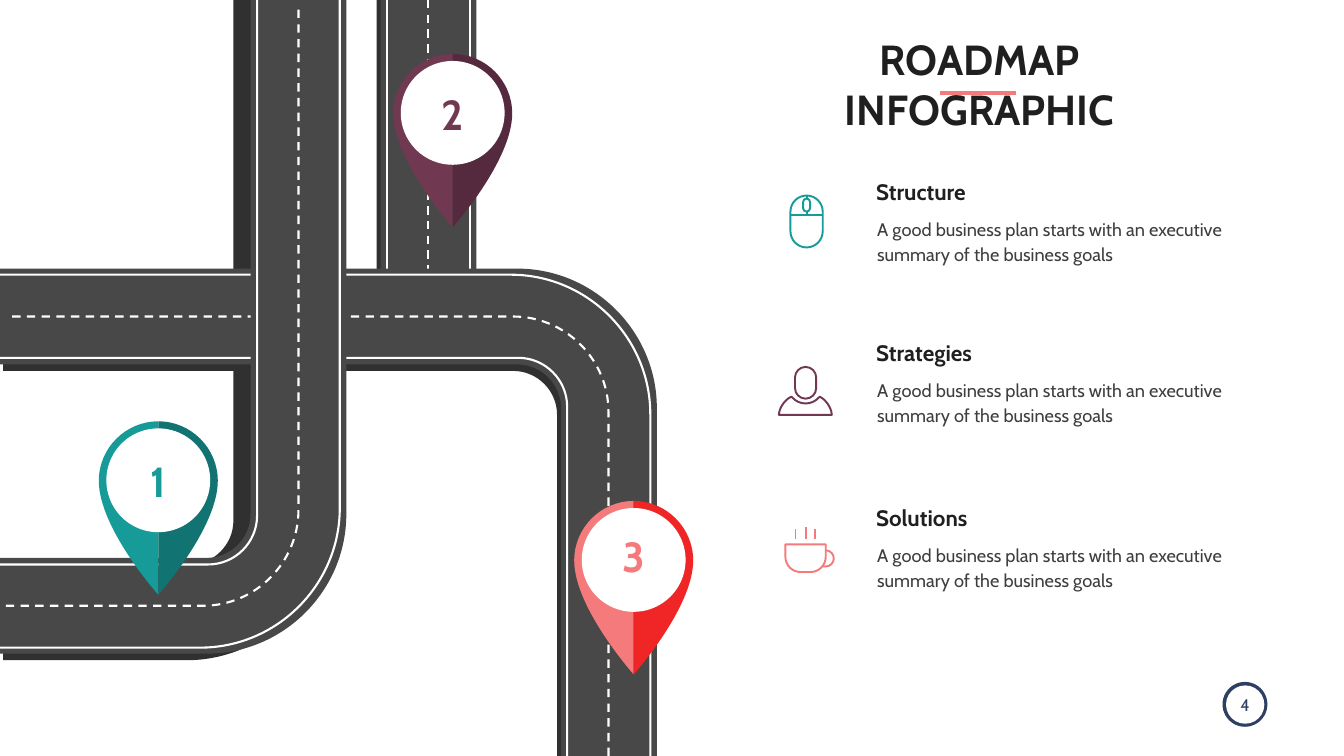
from dataclasses import dataclass
from math import dist
from typing import Any, Optional

from lxml.etree import SubElement
from pptx import Presentation
from pptx.dml.color import RGBColor
from pptx.enum.dml import MSO_LINE
from pptx.enum.shapes import MSO_CONNECTOR, MSO_SHAPE
from pptx.enum.text import MSO_ANCHOR, MSO_AUTO_SIZE, PP_ALIGN
from pptx.oxml.ns import qn
from pptx.util import Emu, Pt

PX = 9144
FONT = "Cabin"
ARC = 0.55
ASPHALT, SHADE, WHITE, INK = "484848", "303030", "FFFFFF", "1F1F1F"
TEAL, PLUM, CORAL, NAVY = "179B98", "713852", "F57A7B", "2D3F63"
BLURB = "A good business plan starts with an executive summary of the business goals"


@dataclass
class Contour:
    points: list
    closed: bool = False


@dataclass
class Road:
    body: list
    lane: list
    edges: list


@dataclass
class Pin:
    label: str
    cx: int
    top: int
    label_top: int
    color: str
    dark: str


@dataclass
class Topic:
    heading: str
    top: int
    color: str
    icon: list


def px(n: float) -> Emu:
    return Emu(round(n * PX))


def rgb(color: str) -> RGBColor:
    return RGBColor.from_string(color)


def vertices(c: Contour) -> list:
    found = []
    for i, pt in enumerate(c.points):
        if len(pt) == 2:
            found.append((*pt, False))
        elif len(pt) == 6:
            found += [(*pt[k:k + 2], True) for k in (0, 2, 4)]
        else:
            x, y, radius = pt
            arms = []
            for nx, ny, *_ in (c.points[i - 1], c.points[(i + 1) % len(c.points)]):
                k = radius / dist((x, y), (nx, ny))
                arms.append(((nx - x) * k, (ny - y) * k))
            (ux, uy), (vx, vy) = arms
            k = 1 - ARC
            found += [(x + ux, y + uy, False), (x + ux * k, y + uy * k, True),
                      (x + vx * k, y + vy * k, True), (x + vx, y + vy, True)]
    return found


def paint(sp: Any, fill: Optional[str] = None, line: Optional[str] = None,
          width: float = 3, dash: bool = False) -> None:
    sp.shadow.inherit = False
    if fill:
        sp.fill.solid()
        sp.fill.fore_color.rgb = rgb(fill)
    else:
        sp.fill.background()
    if line:
        sp.line.color.rgb = rgb(line)
        sp.line.width = Pt(width)
        if dash:
            sp.line.dash_style = MSO_LINE.DASH
    else:
        sp.line.fill.background()


def add_outline(shapes: Any, contours: list, **style: Any) -> None:
    builder, flags = None, []
    for c in contours:
        found = vertices(c)
        flags += [curved for *_, curved in found]
        (x, y), *rest = [(a * PX, b * PX) for a, b, _ in found]
        if builder is None:
            builder = shapes.build_freeform(x, y)
        else:
            builder.move_to(x, y)
        builder.add_line_segments(rest, close=c.closed)
    sp = builder.convert_to_shape()
    nodes = list(sp._element.iter(qn("a:moveTo"), qn("a:lnTo")))
    curved = [n for n, flag in zip(nodes, flags) if flag]
    for first, *others in zip(curved[::3], curved[1::3], curved[2::3]):
        first.tag = qn("a:cubicBezTo")
        for n in others:
            first.append(n[0])
            n.getparent().remove(n)
    paint(sp, **style)


def add_preset(shapes: Any, kind: Any, x: int, y: int, w: int, h: int, fill: str) -> None:
    paint(shapes.add_shape(kind, px(x), px(y), px(w), px(h)), fill)


def add_line(shapes: Any, x1: int, y1: int, x2: int, y2: int, color: str,
             width: float = 3, dash: bool = False) -> None:
    sp = shapes.add_connector(MSO_CONNECTOR.STRAIGHT, px(x1), px(y1), px(x2), px(y2))
    sp.line.color.rgb = rgb(color)
    sp.line.width = Pt(width)
    if dash:
        sp.line.dash_style = MSO_LINE.DASH
    SubElement(sp._element.spPr, qn("a:effectLst"))


def set_text(sp: Any, text: str, size: int, color: str, bold: bool = False,
             align: Any = PP_ALIGN.LEFT, anchor: Any = MSO_ANCHOR.TOP, wrap: bool = False) -> Any:
    tf = sp.text_frame
    tf.auto_size = MSO_AUTO_SIZE.NONE
    tf.word_wrap = wrap
    tf.vertical_anchor = anchor
    p = tf.paragraphs[0]
    p.text = text
    p.alignment = align
    p.font.name, p.font.size, p.font.bold = FONT, Pt(size), bold
    p.font.color.rgb = rgb(color)
    return tf


def add_text(shapes: Any, x: int, y: int, w: int, h: int, *args: Any, **kw: Any) -> Any:
    return set_text(shapes.add_textbox(px(x), px(y), px(w), px(h)), *args, **kw)


def add_road(shapes: Any, road: Road) -> None:
    add_outline(shapes, [Contour(road.body, True)], fill=ASPHALT)
    add_outline(shapes, [Contour(road.lane)], line=WHITE, dash=True)
    for edge in road.edges:
        add_outline(shapes, [Contour(edge)], line=WHITE)


def add_pin(shapes: Any, pin: Pin) -> None:
    grp = shapes.add_group_shape().shapes
    cx, top, tip = pin.cx, pin.top, pin.top + 344
    for r, color in ((-118, pin.color), (118, pin.dark)):
        half = [(cx, top), (cx + r, top, 118), (cx + r, top + 118),
                (cx + r, top + 212, cx, tip, cx, tip)]
        add_outline(grp, [Contour(half, True)], fill=color)
    add_preset(grp, MSO_SHAPE.OVAL, cx - 103, top + 14, 206, 206, WHITE)
    add_text(grp, cx - 32, pin.label_top, 64, 111, pin.label, 60, pin.color,
             bold=True, align=PP_ALIGN.CENTER)


def add_topic(shapes: Any, topic: Topic) -> None:
    add_text(shapes, 1728, topic.top, 232, 64, topic.heading, 32, INK,
             bold=True, anchor=MSO_ANCHOR.MIDDLE)
    tf = add_text(shapes, 1720, topic.top + 68, 780, 118, BLURB, 26, "3E3E3E", wrap=True)
    tf.margin_left = tf.margin_right = px(20)
    tf.margin_top = tf.margin_bottom = px(10)
    tf.paragraphs[0].line_spacing = Pt(36)
    add_outline(shapes, topic.icon, line=topic.color, width=2.75)


SHADOW = [(463, 0), (654, 0), (654, 546), (747, 546), (747, 0), (937, 0), (937, 546),
          (1295, 546, 277), (1295, 1500), (1105, 1500), (1105, 736, 87), (654, 736),
          (654, 1310, 284), (6, 1310), (6, 1120), (463, 1120, 87), (463, 736),
          (6, 736), (6, 546), (463, 546)]
CROSS_ROAD = Road(
    [(0, 533), (1303, 533, 277), (1303, 1500), (1113, 1500), (1113, 723, 87), (0, 723)],
    [(24, 628), (1207, 628, 189), (1207, 1500)],
    [[(0, 545), (1290, 545, 277), (1290, 1500)], [(0, 710), (1125, 710, 97), (1125, 1500)]])
MAIN_ROAD = Road(
    [(497, 0), (687, 0), (687, 1297, 277), (0, 1297), (0, 1107), (497, 1107, 87)],
    [(592, 19), (592, 1202, 190), (0, 1202)],
    [[(674, 0), (674, 1285, 277), (0, 1285)], [(510, 0), (510, 1120, 97), (0, 1120)]])
MOUSE = [Contour([(1568, 388, 32), (1632, 388, 32), (1632, 491, 32), (1568, 491, 32)], True),
         Contour([(1593, 394, 7), (1607, 394, 7), (1607, 420, 7), (1593, 420, 7)], True),
         Contour([(1568, 426), (1632, 426)]),
         Contour([(1600, 388), (1600, 394)]), Contour([(1600, 420), (1600, 426)])]
PERSON = [Contour([(1577, 728, 21), (1619, 728, 21), (1619, 791, 21), (1577, 791, 21)], True),
          Contour([(1545, 823), (1547, 798, 24), (1570, 787), (1598, 818, 40),
                   (1626, 787), (1648, 798, 24), (1650, 823)], True)]
CUP = [Contour([(1558, 1080), (1638, 1080), (1638, 1135, 30), (1558, 1135, 30)], True),
       Contour([(1638, 1092), (1654, 1092, 16), (1654, 1124, 16), (1633, 1124)])]
CUP += [Contour([(x, y), (x, 1070)]) for x, y in ((1578, 1050), (1598, 1045), (1617, 1050))]
TOPICS = [Topic("Structure", 348, TEAL, MOUSE), Topic("Strategies", 667, PLUM, PERSON),
          Topic("Solutions", 995, CORAL, CUP)]
PINS = [Pin("1", 314, 836, 899, TEAL, "117472"), Pin("2", 898, 107, 170, PLUM, "552A3E"),
        Pin("3", 1257, 994, 1048, CORAL, "EF2526")]


def main() -> None:
    prs = Presentation()
    prs.slide_width, prs.slide_height = px(2666), px(1500)
    s = prs.slides.add_slide(prs.slide_layouts[5])
    shapes = s.shapes
    title = shapes.title
    title.left, title.top, title.width, title.height = px(1475), px(61), px(936), px(111)
    set_text(title, "ROADMAP INFOGRAPHIC", 60, INK, bold=True, align=PP_ALIGN.CENTER, wrap=True)
    add_line(shapes, 1865, 185, 2015, 185, CORAL, 5)
    add_preset(shapes, MSO_SHAPE.OVAL, 2425, 1353, 89, 89, NAVY)
    add_preset(shapes, MSO_SHAPE.OVAL, 2432, 1360, 76, 76, WHITE)
    add_text(shapes, 2440, 1373, 60, 50, "4", 24, NAVY, align=PP_ALIGN.CENTER)
    add_outline(shapes, [Contour(SHADOW, True)], fill=SHADE)
    add_preset(shapes, MSO_SHAPE.RECTANGLE, 755, 0, 190, 707, ASPHALT)
    for x, dash in ((849, True), (933, False), (767, False)):
        add_line(shapes, x, 0, x, 551, WHITE, dash=dash)
    add_road(shapes, CROSS_ROAD)
    add_road(shapes, MAIN_ROAD)
    for topic in TOPICS:
        add_topic(shapes, topic)
    for pin in PINS:
        add_pin(shapes, pin)
    prs.save("out.pptx")


if __name__ == "__main__":
    main()
